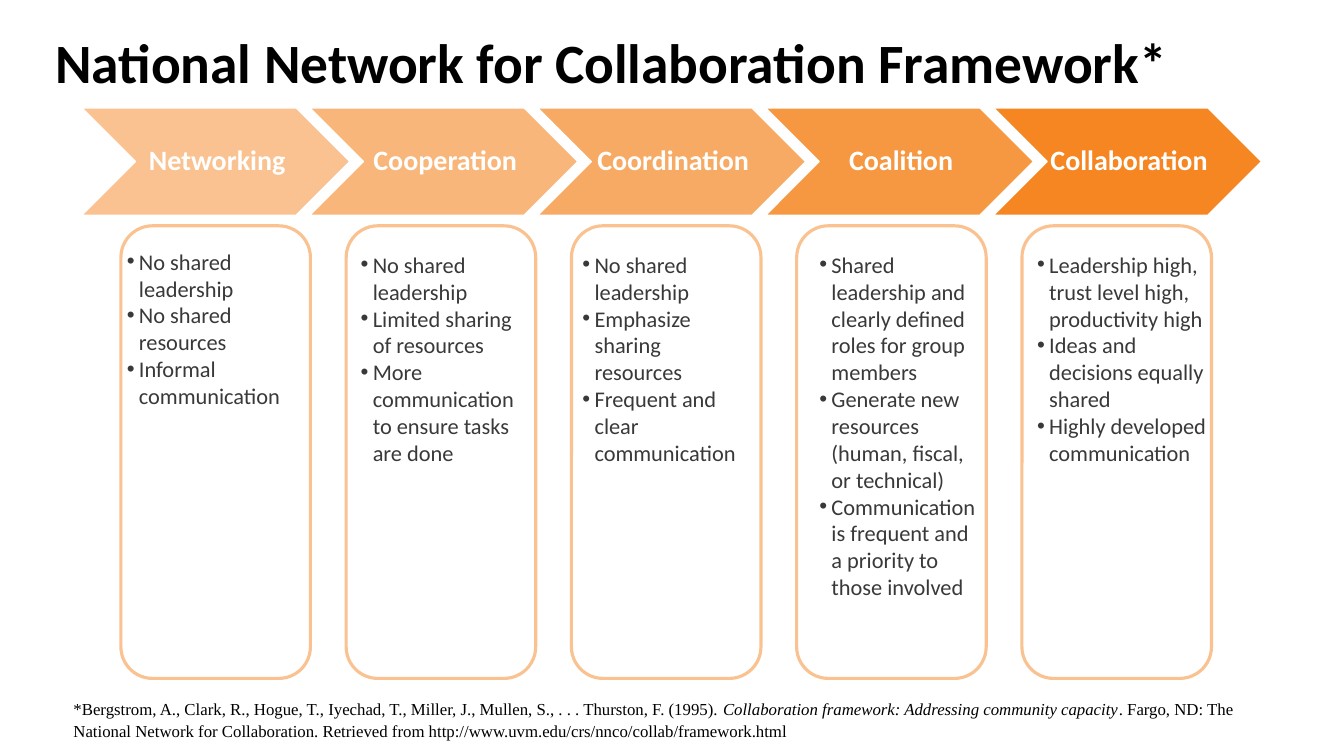
from dataclasses import dataclass

import pptx
import pptx.dml.color
import pptx.enum.shapes
import pptx.enum.text
import pptx.oxml.ns
import pptx.oxml.xmlchemy
import pptx.shapes.autoshape
import pptx.slide
import pptx.text.text
import pptx.util

Inches = pptx.util.Inches
Pt = pptx.util.Pt
SLIDE_WIDTH = Inches(13.33)
SLIDE_HEIGHT = Inches(7.5)


@dataclass(frozen=True)
class Theme:
    orange: str = "F58622"
    outline: str = "FAC290"
    white: str = "FFFFFF"
    black: str = "000000"
    note: str = "3B3838"
    sans: str = "Calibri"
    serif: str = "Times New Roman"
    title_size: float = 39.6
    stage_size: float = 20
    note_size: float = 16
    citation_size: float = 12


@dataclass(frozen=True)
class Area:
    """A rectangle in percent of the slide's width and height."""
    left: float
    top: float
    width: float
    height: float

    def column(self, index: int, pitch: float) -> "Area":
        return Area(self.left + index * pitch, self.top, self.width, self.height)

    def lengths(self) -> tuple[int, int, int, int]:
        return (int(SLIDE_WIDTH * self.left / 100), int(SLIDE_HEIGHT * self.top / 100),
                int(SLIDE_WIDTH * self.width / 100), int(SLIDE_HEIGHT * self.height / 100))


@dataclass(frozen=True)
class Stage:
    name: str
    opacity: int
    notes: tuple[str, ...]
    line_count: int
    note_shift: float
    note_top: float = 32.53
    note_width: float = 14.1


THEME = Theme()
TITLE = Area(3.38, 3.07, 93.15, 11.2)
CITATION = Area(4.73, 91.6, 90.53, 6.93)
CHEVRON = Area(6.08, 14.27, 19.95, 14.2)
CHEVRON_PITCH = 16.96
PANEL = Area(9, 29.87, 14.1, 59.87)
PANEL_PITCH = 16.76
NOTE_LINE = 3.58
NOTE_PADDING = 1.33

STAGES = (
    Stage("Networking", 50,
          ("No shared leadership", "No shared resources", "Informal communication"),
          6, -0.3, note_top=32.13),
    Stage("Cooperation", 60,
          ("No shared leadership", "Limited sharing of resources",
           "More communication to ensure tasks are done"),
          8, 0.34, note_width=13.35),
    Stage("Coordination", 70,
          ("No shared leadership", "Emphasize sharing resources",
           "Frequent and clear communication"),
          8, 0.08),
    Stage("Coalition", 85,
          ("Shared leadership and clearly defined roles for group members",
           "Generate new resources (human, fiscal, or technical)",
           "Communication is frequent and a priority to those involved"),
          13, 0.95, note_width=13.35),
    Stage("Collaboration", 100,
          ("Leadership high, trust level high, productivity high",
           "Ideas and decisions equally shared", "Highly developed communication"),
          9, 0.39),
)

CITATION_RUNS = (
    ("*Bergstrom, A., Clark, R., Hogue, T., Iyechad, T., Miller, J., Mullen, S., "
     ". . . Thurston, F. (1995). ", False),
    ("Collaboration framework: Addressing community capacity", True),
    (". Fargo, ND: The National Network for Collaboration. Retrieved from "
     "http://www.uvm.edu/crs/nnco/collab/framework.html", False),
)


def color(value: str) -> pptx.dml.color.RGBColor:
    return pptx.dml.color.RGBColor.from_string(value)


def style(paragraph: pptx.text.text._Paragraph, name: str, size: float,
          value: str, bold: bool = False) -> None:
    paragraph.font.name = name
    paragraph.font.size = Pt(size)
    paragraph.font.color.rgb = color(value)
    paragraph.font.bold = bold


def add_text_frame(slide: pptx.slide.Slide, area: Area) -> pptx.text.text.TextFrame:
    frame = slide.shapes.add_textbox(*area.lengths()).text_frame
    frame.word_wrap = True
    return frame


def add_outlined(slide: pptx.slide.Slide, kind: pptx.enum.shapes.MSO_SHAPE, area: Area,
                 line: str, width: float) -> pptx.shapes.autoshape.Shape:
    shape = slide.shapes.add_shape(kind, *area.lengths())
    shape.shadow.inherit = False
    shape.line.color.rgb = color(line)
    shape.line.width = Pt(width)
    return shape


def set_opacity(shape: pptx.shapes.autoshape.Shape, percent: int) -> None:
    fill = shape.fill._xPr.find(pptx.oxml.ns.qn("a:solidFill"))
    alpha = pptx.oxml.xmlchemy.OxmlElement("a:alpha")
    alpha.set("val", str(percent * 1000))
    fill[0].append(alpha)


def add_bullet(paragraph: pptx.text.text._Paragraph) -> None:
    properties = paragraph._p.get_or_add_pPr()
    properties.set("marL", str(Inches(0.12)))
    properties.set("indent", str(-Inches(0.12)))
    font = pptx.oxml.xmlchemy.OxmlElement("a:buFont")
    font.set("typeface", "Arial")
    bullet = pptx.oxml.xmlchemy.OxmlElement("a:buChar")
    bullet.set("char", "•")
    properties.insert_element_before(font, "a:defRPr")
    properties.insert_element_before(bullet, "a:defRPr")


def add_chevron(slide: pptx.slide.Slide, stage: Stage, area: Area) -> None:
    shape = add_outlined(slide, pptx.enum.shapes.MSO_SHAPE.CHEVRON, area, THEME.white, 1)
    shape.fill.solid()
    shape.fill.fore_color.rgb = color(THEME.orange)
    if stage.opacity < 100:
        set_opacity(shape, stage.opacity)
    frame = shape.text_frame
    frame.word_wrap = False
    frame.vertical_anchor = pptx.enum.text.MSO_ANCHOR.MIDDLE
    frame.margin_left = Inches(0.03)
    frame.margin_right = 0
    frame.margin_top = frame.margin_bottom = Inches(0.01)
    paragraph = frame.paragraphs[0]
    paragraph.text = stage.name
    paragraph.alignment = pptx.enum.text.PP_ALIGN.CENTER
    paragraph.line_spacing = 0.9
    style(paragraph, THEME.sans, THEME.stage_size, THEME.white, bold=True)


def add_notes(slide: pptx.slide.Slide, stage: Stage, panel: Area) -> None:
    """Write a stage's bullet list over its panel."""
    height = stage.line_count * NOTE_LINE + NOTE_PADDING
    frame = add_text_frame(slide, Area(panel.left + stage.note_shift, stage.note_top,
                                       stage.note_width, height))
    for index, note in enumerate(stage.notes):
        paragraph = frame.add_paragraph() if index else frame.paragraphs[0]
        paragraph.text = note
        style(paragraph, THEME.sans, THEME.note_size, THEME.note)
        add_bullet(paragraph)


def add_title(slide: pptx.slide.Slide) -> None:
    frame = add_text_frame(slide, TITLE)
    frame.vertical_anchor = pptx.enum.text.MSO_ANCHOR.MIDDLE
    paragraph = frame.paragraphs[0]
    paragraph.text = "National Network for Collaboration Framework*"
    paragraph.line_spacing = 0.9
    style(paragraph, THEME.sans, THEME.title_size, THEME.black, bold=True)


def add_citation(slide: pptx.slide.Slide) -> None:
    paragraph = add_text_frame(slide, CITATION).paragraphs[0]
    paragraph.line_spacing = 1.07
    style(paragraph, THEME.serif, THEME.citation_size, THEME.black)
    for text, italic in CITATION_RUNS:
        run = paragraph.add_run()
        run.text = text
        run.font.italic = italic


def main() -> None:
    presentation = pptx.Presentation()
    presentation.slide_width = SLIDE_WIDTH
    presentation.slide_height = SLIDE_HEIGHT
    slide = presentation.slides.add_slide(presentation.slide_layouts[6])
    add_title(slide)
    for index, stage in enumerate(STAGES):
        add_chevron(slide, stage, CHEVRON.column(index, CHEVRON_PITCH))
        panel = PANEL.column(index, PANEL_PITCH)
        add_outlined(slide, pptx.enum.shapes.MSO_SHAPE.ROUNDED_RECTANGLE, panel,
                     THEME.outline, 2.25).fill.background()
        add_notes(slide, stage, panel)
    add_citation(slide)
    presentation.save("out.pptx")


if __name__ == "__main__":
    main()
